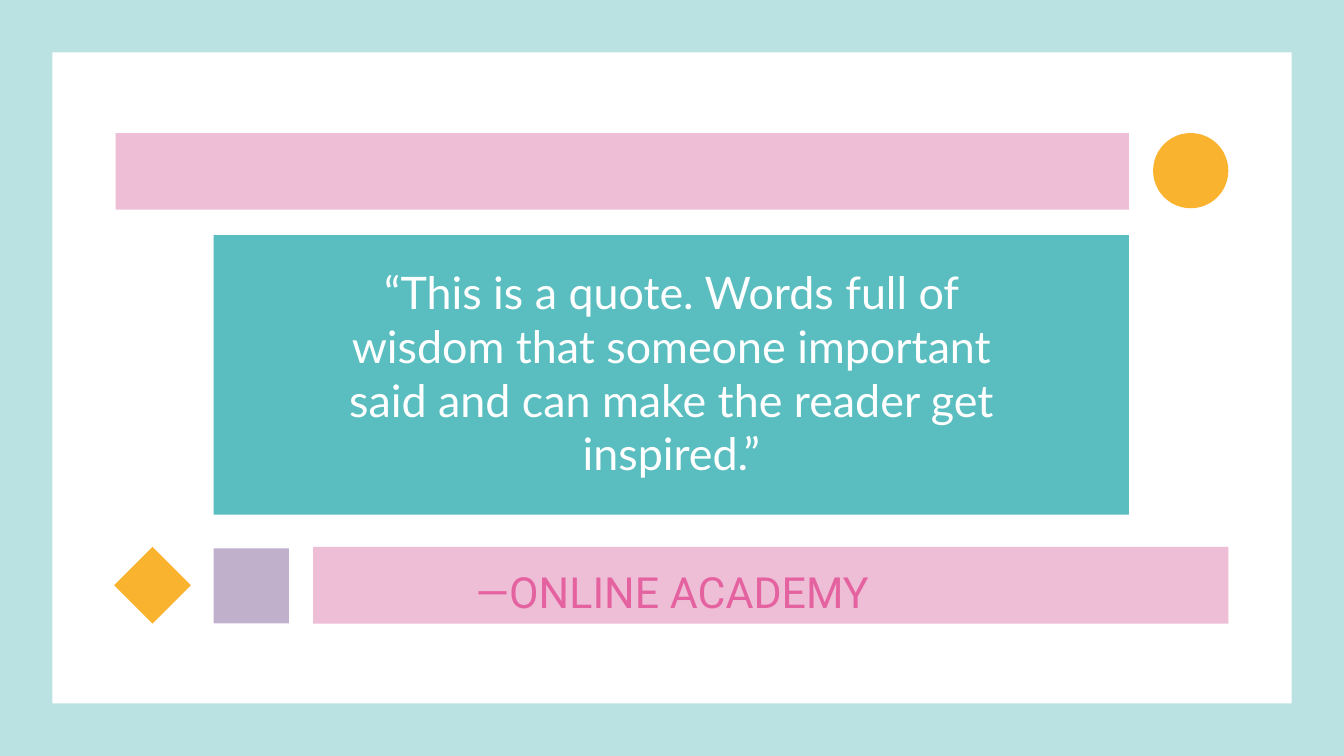
from pptx import Presentation
from pptx.dml.color import RGBColor as RGB
from pptx.enum.shapes import MSO_SHAPE as Kind
from pptx.enum.text import MSO_ANCHOR as Anchor, PP_ALIGN as Align
from pptx.util import Inches, Pt

MINT = RGB(0xBB, 0xE2, 0xE2)
WHITE = RGB(0xFF, 0xFF, 0xFF)
PINK = RGB(0xEE, 0xBD, 0xD6)
ROSE = RGB(0xE5, 0x62, 0xA0)
LILAC = RGB(0xC0, 0xB0, 0xCC)
AMBER = RGB(0xFA, 0xB3, 0x2E)
TEAL = RGB(0x5A, 0xBE, 0xC0)

WIDE = 10
HIGH = WIDE * 9 / 16
EDGE = 0.39  # mint border around the panel
BAR = 0.57   # height of the pink bars
DOT = 0.56   # side of the small shapes


def add_block(slide, kind, x, y, w, h, color):
    shape = slide.shapes.add_shape(kind, Inches(x), Inches(y), Inches(w), Inches(h))
    shape.shadow.inherit = False
    shape.fill.solid()
    shape.fill.fore_color.rgb = color
    shape.line.fill.background()


def add_text(slide, x, y, w, h, text, font, size, color):
    box = slide.shapes.add_textbox(Inches(x), Inches(y), Inches(w), Inches(h))
    frame = box.text_frame
    frame.word_wrap = True
    frame.vertical_anchor = Anchor.TOP
    frame.margin_left = frame.margin_right = Inches(0.1)
    frame.margin_top = frame.margin_bottom = Inches(0.1)
    frame.text = text
    para = frame.paragraphs[0]
    para.alignment = Align.CENTER
    style = para.runs[0].font
    style.name, style.size = font, Pt(size)
    style.color.rgb = color


def add_frame(slide):
    fill = slide.background.fill
    fill.solid()
    fill.fore_color.rgb = MINT
    add_block(slide, Kind.RECTANGLE, EDGE, EDGE,
              WIDE - 2 * EDGE, HIGH - 2 * EDGE, WHITE)


def add_header(slide, x, y, w):
    # Long bar with a circle at the right end
    add_block(slide, Kind.RECTANGLE, x, y, 7.54, BAR, PINK)
    add_block(slide, Kind.OVAL, x + w - DOT, y, DOT, DOT, AMBER)


def add_quote(slide, x, y, w, h):
    add_block(slide, Kind.RECTANGLE, x, y, w, h, TEAL)
    add_text(slide, x + 0.89, y + 0.12, w - 1.78, h - 0.24,
             "“This is a quote. Words full of wisdom that someone important "
             "said and can make the reader get inspired.”", "Lato", 24, WHITE)


def add_footer(slide, x, y, w):
    # Diamond, square and bar with the author
    left = 1.48
    add_block(slide, Kind.RECTANGLE, x + left, y, w - left, BAR, PINK)
    add_block(slide, Kind.RECTANGLE, x + 0.74, y + 0.01, DOT, DOT, LILAC)
    add_block(slide, Kind.DIAMOND, x, y, BAR, BAR, AMBER)
    add_text(slide, x + 2.47, y + 0.04, 3.37, 0.51,
             "—ONLINE ACADEMY", "Roboto", 23, ROSE)


def main():
    deck = Presentation()
    deck.slide_width, deck.slide_height = Inches(WIDE), Inches(HIGH)
    slide = deck.slides.add_slide(deck.slide_layouts[6])
    add_frame(slide)
    add_header(slide, 0.86, 0.99, 8.28)
    add_quote(slide, 1.59, 1.75, 6.81, 2.08)
    add_footer(slide, 0.85, 4.07, 8.29)
    deck.save("out.pptx")


if __name__ == "__main__":
    main()
